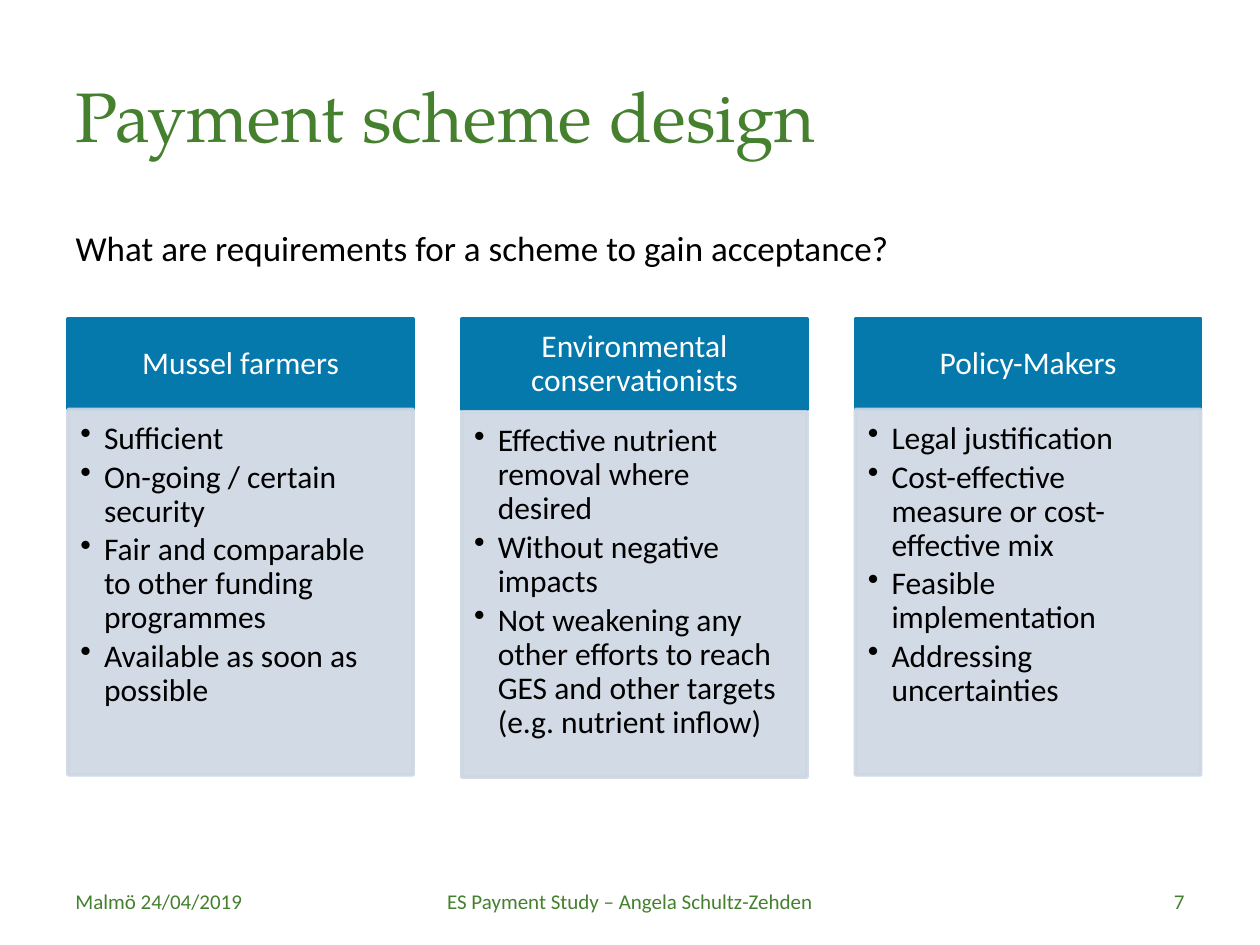
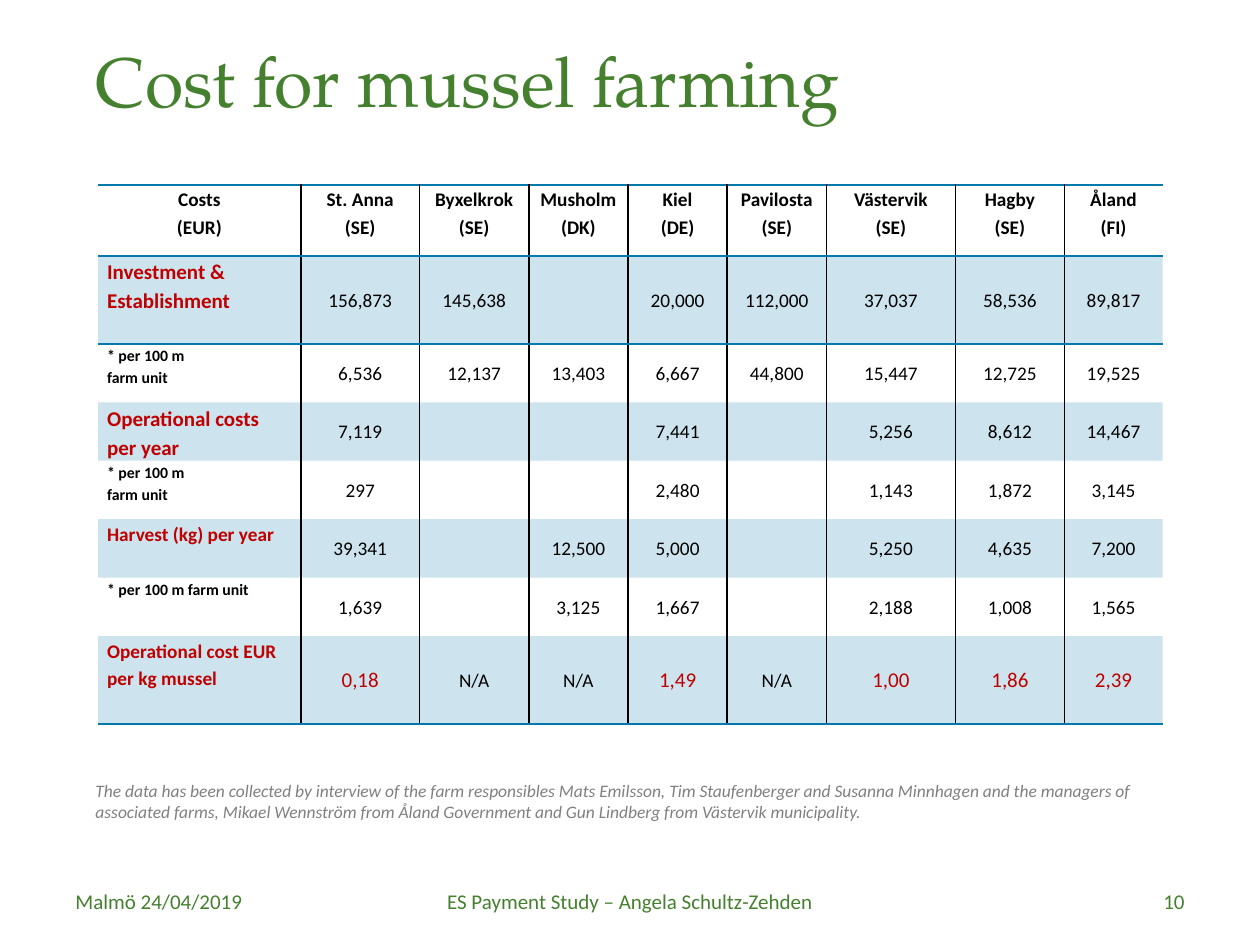
"""Build two slides on payment schemes and the cost of mussel farming."""
import dataclasses
import pptx
import pptx.dml.color
import pptx.enum.shapes
import pptx.enum.text
import pptx.oxml
import pptx.oxml.ns
import pptx.util
import lxml.etree

Pt = pptx.util.Pt
RGB = pptx.dml.color.RGBColor.from_string
Align = pptx.enum.text.PP_ALIGN
Anchor = pptx.enum.text.MSO_ANCHOR
qn = pptx.oxml.ns.qn


@dataclasses.dataclass(frozen=True)
class Theme:
    green: str = "45802F"
    blue: str = "0679AC"
    pale: str = "CCD7E3"
    red: str = "C00000"
    black: str = "000000"
    white: str = "FFFFFF"
    gray: str = "808080"
    serif: str = "TeX Gyre Pagella"
    sans: str = "Calibri"
    title: int = 40
    lead: int = 20
    panel: int = 18
    foot: int = 12
    large: int = 12
    cell: int = 11
    note: int = 10
    small: int = 9


theme = Theme()


def write(frame, text, size, color=theme.black, font=theme.sans, bold=False, italic=False,
          align=Align.LEFT, anchor=Anchor.TOP, inset=(7.2, 3.6, 7.2, 3.6),
          line=1.0, after=0, bullet=None, indent=0):
    """Fill a text frame or cell with one paragraph per line of text."""
    box = getattr(frame, "text_frame", frame)
    for side, gap in zip(("left", "top", "right", "bottom"), inset):
        setattr(frame, "margin_" + side, Pt(gap))
    frame.vertical_anchor = anchor
    box.word_wrap = True
    for num, part in enumerate(text.split("\n")):
        para = box.add_paragraph() if num else box.paragraphs[0]
        prop = para._p.get_or_add_pPr()
        prop.set("marL", str(Pt(indent)))
        prop.set("indent", str(-Pt(indent)))
        if bullet:
            lxml.etree.SubElement(prop, qn("a:buChar")).set("char", bullet)
        else:
            lxml.etree.SubElement(prop, qn("a:buNone"))
        para.alignment = align
        para.line_spacing = line
        para.space_after = Pt(after)
        if num == 0:
            para.space_before = Pt(0)
        run = para.add_run()
        run.text = part
        run.font.name, run.font.size = font, Pt(size)
        run.font.bold, run.font.italic = bold, italic
        run.font.color.rgb = RGB(color)


def fade(node, share):
    """Make the colours below a node partly opaque."""
    for tone in node.iter(qn("a:srgbClr")):
        lxml.etree.SubElement(tone, qn("a:alpha")).set("val", str(share * 1000))


deck = pptx.Presentation()
deck.slide_width, deck.slide_height = Pt(720), Pt(540)
scheme = deck.slides.add_slide(deck.slide_layouts[1])
cost = deck.slides.add_slide(deck.slide_layouts[5])

pages = [
    (scheme, "Payment scheme design", (36, 31.7, 535, 67.7), "7"),
    (cost, "Cost for mussel farming", (47.5, 18, 648, 55.4), "10"),
]
for slide, title, place, page in pages:
    head = slide.shapes.title
    head.left, head.top, head.width, head.height = map(Pt, place)
    head.text_frame.auto_size = pptx.enum.text.MSO_AUTO_SIZE.NONE
    write(head.text_frame, title, theme.title, theme.green, theme.serif, anchor=Anchor.MIDDLE)
    feet = [
        ("Malmö 24/04/2019", 36, 168, Align.LEFT),
        ("ES Payment Study – Angela Schultz-Zehden", 246, 228, Align.CENTER),
        (page, 516, 168, Align.RIGHT),
    ]
    for text, left, width, align in feet:
        foot = slide.shapes.add_textbox(Pt(left), Pt(500.5), Pt(width), Pt(28.75))
        write(foot.text_frame, text, theme.foot, theme.green, align=align, anchor=Anchor.MIDDLE)

lead = scheme.placeholders[1]
lead.left, lead.top, lead.width, lead.height = Pt(36), Pt(126), Pt(648), Pt(65)
lead.text_frame.auto_size = pptx.enum.text.MSO_AUTO_SIZE.NONE
write(lead.text_frame, "What are requirements for a scheme to gain acceptance?", theme.lead)

groups = [
    ("Mussel farmers", 234,
     "Sufficient\nOn-going / certain security\n"
     "Fair and comparable to other funding programmes\nAvailable as soon as possible"),
    ("Environmental conservationists", 235.4,
     "Effective nutrient removal where desired\nWithout negative impacts\n"
     "Not weakening any other efforts to reach GES and other targets (e.g. nutrient inflow)"),
    ("Policy-Makers", 234,
     "Legal justification\nCost-effective measure or cost-effective mix\n"
     "Feasible implementation\nAddressing uncertainties"),
]
for num, (name, top, needs) in enumerate(groups):
    left = 38.9 + 225 * num
    pair = []
    for start, height, color in ((182.2, 51.8, theme.blue), (top, 208.8, theme.pale)):
        panel = scheme.shapes.add_shape(pptx.enum.shapes.MSO_SHAPE.RECTANGLE,
                                        Pt(left), Pt(start), Pt(197.3), Pt(height))
        panel.shadow.inherit = False
        panel.fill.solid()
        panel.fill.fore_color.rgb = panel.line.color.rgb = RGB(color)
        panel.line.width = Pt(2)
        pair.append(panel)
    label, body = pair
    fade(body._element.spPr, 90)
    write(label.text_frame, name, theme.panel, theme.white, align=Align.CENTER,
          anchor=Anchor.MIDDLE, inset=(10, 5.8, 10, 5.8), line=0.9)
    write(body.text_frame, needs, theme.panel, inset=(7.2, 7.2, 10, 11.5),
          line=0.9, after=2.7, bullet="•", indent=13.5)

farms = ["Costs\n(EUR)", "St. Anna (SE)", "Byxelkrok\n(SE)", "Musholm\n(DK)", "Kiel\n(DE)",
         "Pavilosta\n(SE)", "Västervik\n(SE)", "Hagby\n(SE)", "Åland\n(FI)"]
unit = "* per 100 m\nfarm unit"
rows = [
    farms,
    ["Investment &\nEstablishment", "156,873", "145,638", "", "20,000", "112,000",
     "37,037", "58,536", "89,817"],
    [unit, "6,536", "12,137", "13,403", "6,667", "44,800", "15,447", "12,725", "19,525"],
    ["Operational costs per year", "7,119", "", "", "7,441", "", "5,256", "8,612", "14,467"],
    [unit, "297", "", "", "2,480", "", "1,143", "1,872", "3,145"],
    ["Harvest (kg) per year", "39,341", "", "12,500", "5,000", "", "5,250", "4,635", "7,200"],
    ["* per 100 m farm unit", "1,639", "", "3,125", "1,667", "", "2,188", "1,008", "1,565"],
    ["Operational cost EUR\nper kg mussel", "0,18", "N/A", "N/A", "1,49", "N/A",
     "1,00", "1,86", "2,39"],
]
sizes = [theme.cell, theme.large, theme.small, theme.large, theme.small,
         theme.cell, theme.small, theme.cell]
wide = [115.9, 67.9, 62.4, 56.7, 56.7, 56.7, 73.7, 62.4, 56]
high = [40.6, 50.3, 33.4, 33.4, 33.4, 33.4, 33.4, 50.3]
last = len(rows) - 1
frame = cost.shapes.add_table(len(rows), len(wide), Pt(56), Pt(105.6),
                              Pt(sum(wide)), Pt(sum(high)))
grid = frame.table
grid.first_row = grid.horz_banding = False
grid._tbl.tblPr.find(qn("a:tableStyleId")).text = "{2D5ABB26-0587-4C30-8999-92F81FD0307C}"
for col, width in zip(grid.columns, wide):
    col.width = Pt(width)
for row, height in zip(grid.rows, high):
    row.height = Pt(height)

for r, row in enumerate(rows):
    for c, text in enumerate(row):
        cell = grid.cell(r, c)
        if r == 0 or c == 0:
            color = theme.red if r % 2 else theme.black
            write(cell, text, sizes[r], color, bold=True, line=1.15, inset=(5.2, 0, 5.2, 0),
                  align=Align.LEFT if r else Align.CENTER)
        else:
            key = r == last and text != "N/A"
            write(cell, text, theme.large if key else theme.cell,
                  theme.red if key else theme.black, align=Align.CENTER,
                  anchor=Anchor.MIDDLE, inset=(0.7, 0.7, 0.7, 0))
        prop = cell._tc.get_or_add_tcPr()
        if r % 2:
            cell.fill.solid()
            cell.fill.fore_color.rgb = RGB(theme.blue)
            fade(prop, 20)
        else:
            cell.fill.background()
        edges = [
            ("L", theme.black, c > 0),
            ("R", theme.black, c < len(wide) - 1),
            ("T", theme.blue, r < 2),
            ("B", theme.blue, r in (0, last)),
        ]
        shown = [edge for edge in edges if edge[2]]
        for spot, (side, color, _) in enumerate(shown):
            rule = lxml.etree.Element(qn("a:ln" + side), w=str(Pt(1)))
            fill = lxml.etree.SubElement(rule, qn("a:solidFill"))
            lxml.etree.SubElement(fill, qn("a:srgbClr")).set("val", color)
            prop.insert(spot, rule)

note = cost.shapes.add_textbox(Pt(47.5), Pt(442), Pt(648), Pt(31.7))
write(note.text_frame,
      "The data has been collected by interview of the farm responsibles Mats Emilsson, "
      "Tim Staufenberger and Susanna Minnhagen and the managers of associated farms, "
      "Mikael Wennström from Åland Government and Gun Lindberg from Västervik municipality.",
      theme.note, theme.gray, italic=True, anchor=Anchor.MIDDLE)

deck.save("out.pptx")
